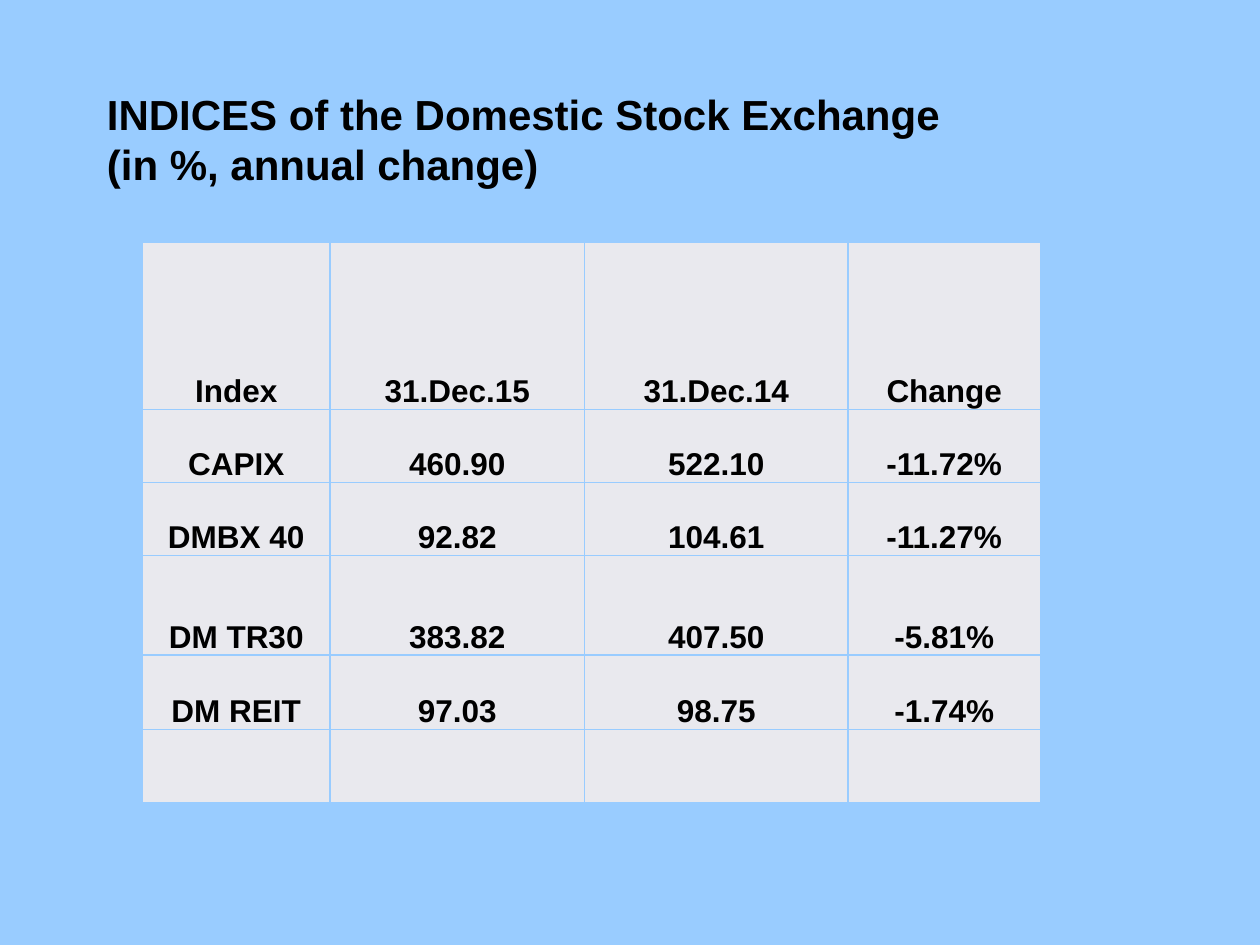
"""Build a slide with a table of annual stock index changes."""
from lxml import etree
from pptx import Presentation
from pptx.dml.color import RGBColor
from pptx.enum.text import MSO_ANCHOR, PP_ALIGN
from pptx.oxml.ns import qn
from pptx.util import Inches, Pt

BOTTOM = MSO_ANCHOR.BOTTOM
CENTER = PP_ALIGN.CENTER
COLORS = {"background": "99CCFF", "cell": "E9E9EE", "border": "99CCFF", "text": "000000"}
TITLE_FONT = {"name": "Arial", "size": Pt(24), "bold": True}
CELL_FONT = {"name": "Arial", "size": Pt(18), "bold": True}
CELL_FORMAT = {
    "margin_left": Inches(0.01),
    "margin_right": Inches(0.01),
    "margin_top": Inches(0.01),
    "margin_bottom": 0,
    "vertical_anchor": BOTTOM,
}
COLUMN_WIDTHS = [1.49, 2.02, 2.09, 1.53]
ROW_HEIGHTS = [1.33, 0.58, 0.58, 0.79, 0.59, 0.58]
INDEX_ROWS = [
    ["Index", "31.Dec.15", "31.Dec.14", "Change"],
    ["CAPIX", "460.90", "522.10", "-11.72%"],
    ["DMBX 40", "92.82", "104.61", "-11.27%"],
    ["DM TR30", "383.82", "407.50", "-5.81%"],
    ["DM REIT", "97.03", "98.75", "-1.74%"],
    ["", "", "", ""],
]


def color(name):
    return RGBColor.from_string(COLORS[name])


def set_attributes(target, values):
    for name, value in values.items():
        setattr(target, name, value)


def set_font(p, values):
    set_attributes(p.font, values)
    p.font.color.rgb = color("text")


def set_background(s):
    fill = s.background.fill
    fill.solid()
    fill.fore_color.rgb = color("background")


def add_title(s, text):
    sp = s.shapes.add_textbox(Inches(0.75), Inches(0.3), Inches(9.11), Inches(1.25))
    tf = sp.text_frame
    set_attributes(tf, {"word_wrap": True, "vertical_anchor": BOTTOM})
    p = tf.paragraphs[0]
    p.text = text
    set_font(p, TITLE_FONT)


def set_borders(cell):
    tcPr = cell._tc.get_or_add_tcPr()
    for position, side in enumerate(("a:lnL", "a:lnR", "a:lnT", "a:lnB")):
        ln = etree.Element(qn(side), w=str(Pt(1)))
        fill = etree.SubElement(ln, qn("a:solidFill"))
        etree.SubElement(fill, qn("a:srgbClr"), val=COLORS["border"])
        tcPr.insert(position, ln)


def format_cell(cell, text):
    set_attributes(cell, CELL_FORMAT)
    cell.fill.solid()
    cell.fill.fore_color.rgb = color("cell")
    set_borders(cell)
    p = cell.text_frame.paragraphs[0]
    p.text = text
    p.alignment = CENTER
    set_font(p, CELL_FONT)


def add_index_table(s):
    frame = s.shapes.add_table(
        len(ROW_HEIGHTS), len(COLUMN_WIDTHS), Inches(1.13), Inches(1.92),
        Inches(sum(COLUMN_WIDTHS)), Inches(sum(ROW_HEIGHTS)),
    )
    table = frame.table
    for column, width in zip(table.columns, COLUMN_WIDTHS):
        column.width = Inches(width)
    for row, height, texts in zip(table.rows, ROW_HEIGHTS, INDEX_ROWS):
        row.height = Inches(height)
        for cell, text in zip(row.cells, texts):
            format_cell(cell, text)


def main():
    prs = Presentation()
    prs.slide_width, prs.slide_height = Inches(10), Inches(7.5)
    s = prs.slides.add_slide(prs.slide_layouts[6])
    set_background(s)
    add_title(s, "INDICES of the Domestic Stock Exchange\v(in %, annual change)")
    add_index_table(s)
    prs.save("out.pptx")


if __name__ == "__main__":
    main()
